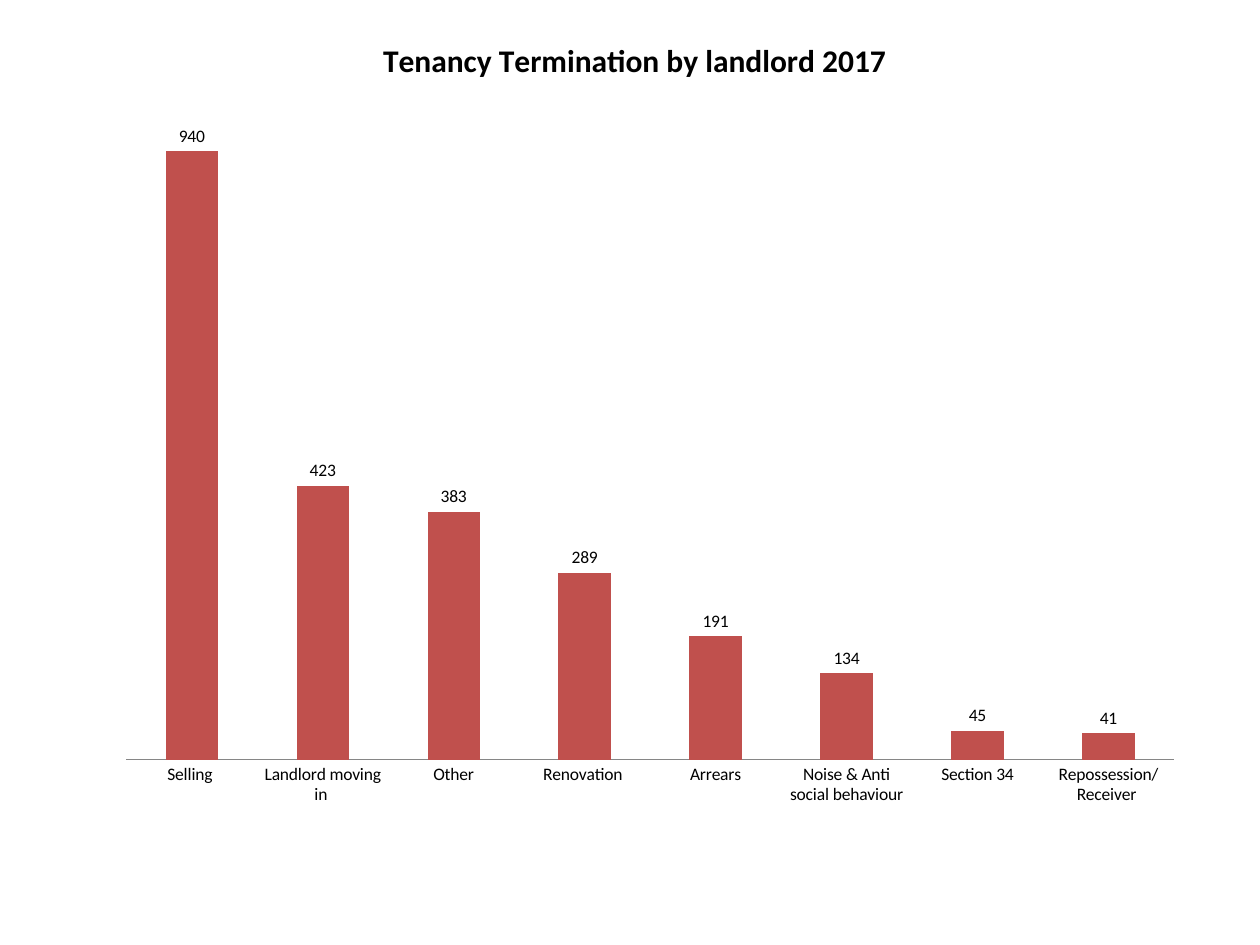
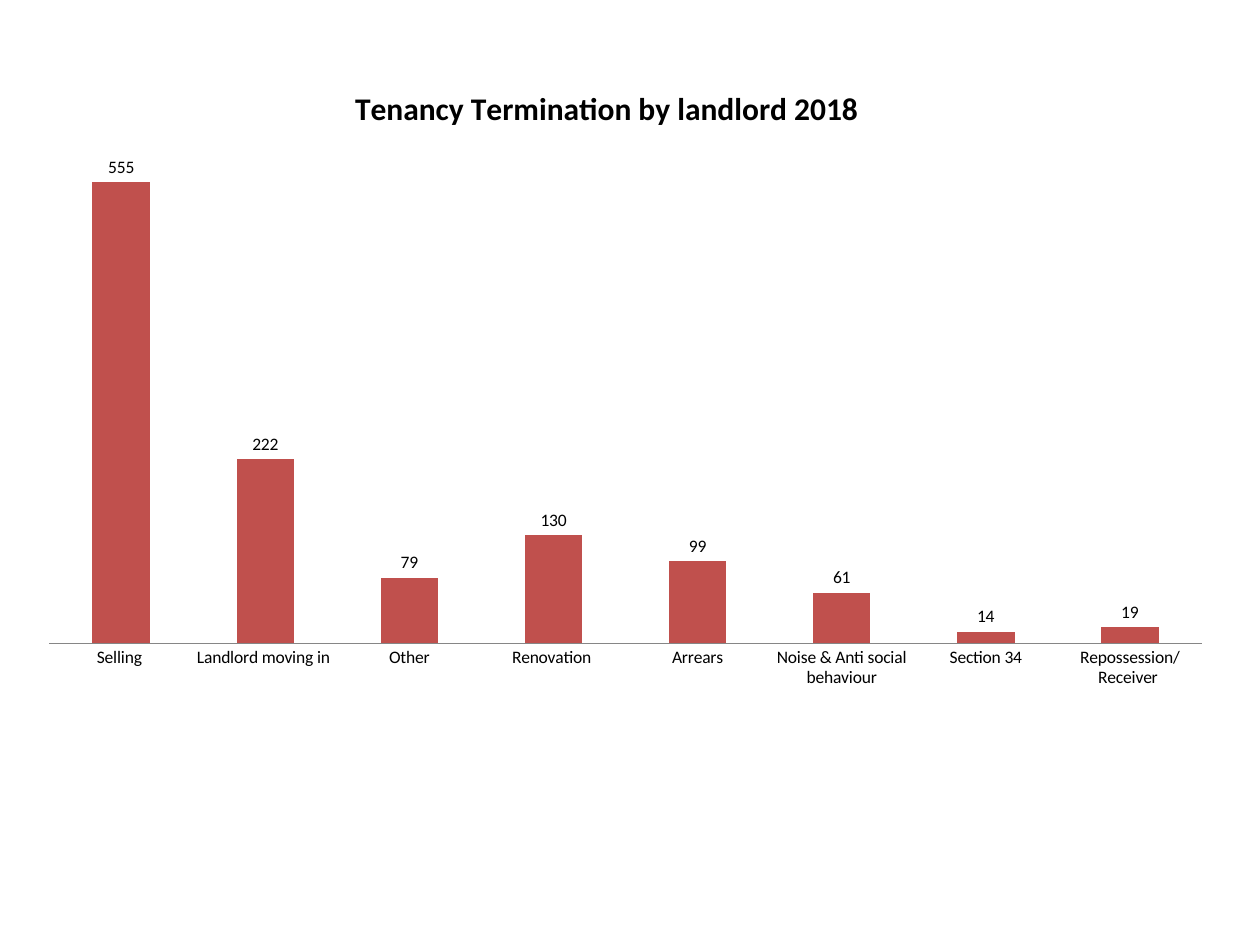
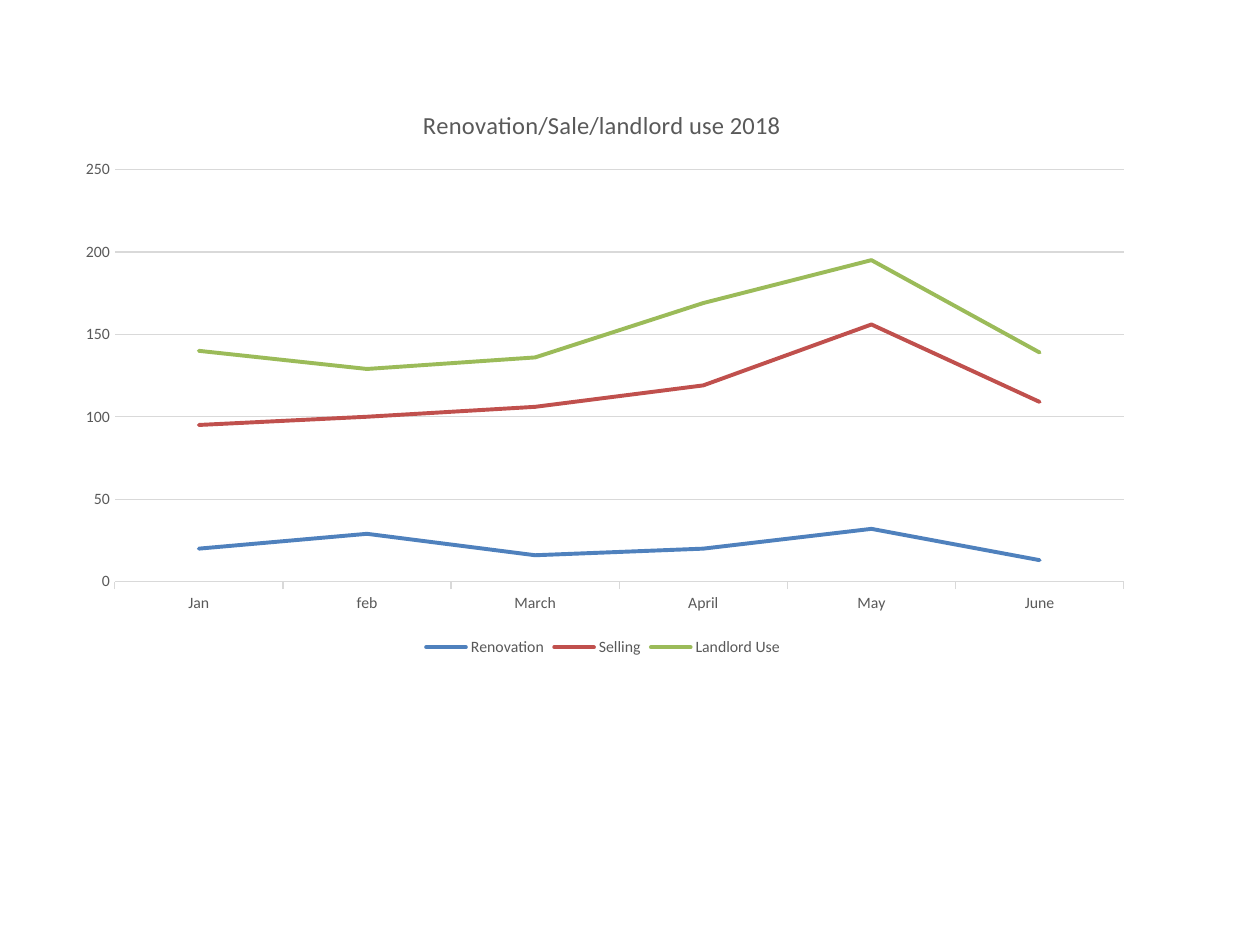
from lxml import etree
from pptx import Presentation
from pptx import util as u
from pptx.chart import data as cd
from pptx.dml.color import RGBColor
from pptx.enum import chart as ec
from pptx.oxml import ns

FONT = "Calibri"
COLORS = {
    "text": "000000",
    "muted": "595959",
    "grid": "D9D9D9",
    "axis": "868686",
    "blue": "4F81BD",
    "red": "C0504D",
    "green": "9BBB59",
}
REASONS = [
    "Selling ", "Landlord moving in ", "Other", "Renovation ", "Arrears",
    "Noise & Anti social behaviour", "Section 34", "Repossession/Receiver ",
]
MONTHS = ["Jan", "feb", "March", "April", "May", "June"]
USES = [
    ("Renovation", [20, 29, 16, 20, 32, 13], "blue"),
    ("Selling", [75, 71, 90, 99, 124, 96], "red"),
    ("Landlord Use ", [45, 29, 30, 50, 39, 30], "green"),
]


def rgb(name):
    return RGBColor.from_string(COLORS[name])


def style(font, size, color, bold=False):
    font.name, font.size, font.bold = FONT, u.Pt(size), bold
    font.color.rgb = rgb(color)


def draw(line, color, width=0.75):
    line.color.rgb = rgb(color)
    line.width = u.Pt(width)


def add_chart(deck, kind, box, cats, rows):
    """Put a chart on a new blank slide; rows are (name, values) pairs."""
    slide = deck.slides.add_slide(deck.slide_layouts[6])
    data = cd.CategoryChartData()
    data.categories = cats
    for name, vals in rows:
        data.add_series(name, vals)
    frame = slide.shapes.add_chart(kind, *map(u.Inches, box), data)
    style(frame.chart.font, 10, "text")
    return frame.chart


def add_title(chart, words, size, color, bold=False, spot=None):
    """Set the title; spot is its top left corner as fractions of the chart."""
    title = chart.chart_title
    title.text_frame.text = words
    style(title.text_frame.paragraphs[0].runs[0].font, size, color, bold)
    title.include_in_layout = False
    if spot:
        layout = title.element.find(ns.qn("c:layout"))
        manual = etree.SubElement(layout, ns.qn("c:manualLayout"))
        pairs = [("xMode", "edge"), ("yMode", "edge"), ("x", spot[0]), ("y", spot[1])]
        for tag, val in pairs:
            etree.SubElement(manual, ns.qn(f"c:{tag}")).set("val", str(val))


def add_bars(deck, year, vals, box, spot):
    chart = add_chart(deck, ec.XL_CHART_TYPE.COLUMN_CLUSTERED, box, REASONS,
                      [("Series 1", vals)])
    add_title(chart, f"Tenancy Termination by landlord {year}", 18, "text", True, spot)
    chart.has_legend = False
    chart.value_axis.visible = False
    chart.value_axis.has_major_gridlines = False
    axis = chart.category_axis
    axis.major_tick_mark = ec.XL_TICK_MARK.NONE
    draw(axis.format.line, "axis")

    plot = chart.plots[0]
    plot.gap_width, plot.overlap = 150, -25
    plot.vary_by_categories = False
    fill = plot.series[0].format.fill
    fill.solid()
    fill.fore_color.rgb = rgb("red")
    plot.has_data_labels = True
    labels = plot.data_labels
    labels.show_value = True
    labels.position = ec.XL_LABEL_POSITION.OUTSIDE_END
    style(labels.font, 10, "text")


def add_lines(deck, box):
    chart = add_chart(deck, ec.XL_CHART_TYPE.LINE_STACKED, box, MONTHS,
                      [row[:2] for row in USES])
    add_title(chart, "Renovation/Sale/landlord use 2018 ", 14, "muted")
    chart.has_legend = True
    legend = chart.legend
    legend.position = ec.XL_LEGEND_POSITION.BOTTOM
    legend.include_in_layout = False

    cats, vals = chart.category_axis, chart.value_axis
    for part in (legend.font, cats.tick_labels.font, vals.tick_labels.font):
        style(part, 9, "muted")
    cats.major_tick_mark = ec.XL_TICK_MARK.OUTSIDE
    draw(cats.format.line, "grid")
    vals.major_tick_mark = ec.XL_TICK_MARK.NONE
    vals.format.line.fill.background()
    vals.has_major_gridlines = True
    draw(vals.major_gridlines.format.line, "grid")

    chart.plots[0].vary_by_categories = False
    for series, (_, _, color) in zip(chart.series, USES):
        series.smooth = False
        series.marker.style = ec.XL_MARKER_STYLE.NONE
        draw(series.format.line, color, 2.25)
    for line in chart.element.xpath(".//c:ser/c:spPr/a:ln"):
        line.set("cap", "rnd")


def main():
    deck = Presentation()
    deck.slide_width, deck.slide_height = u.Inches(10), u.Inches(7.5)
    add_bars(deck, 2017, [940, 423, 383, 289, 191, 134, 45, 41],
             (0.83, 0.13, 8.66, 6.38), (0.25, 0.02))
    add_bars(deck, 2018, [555, 222, 79, 130, 99, 61, 14, 19],
             (0.2, 0.44, 9.53, 5.12), (0.27, 0.04))
    add_lines(deck, (0.51, 0.68, 8.58, 4.57))
    deck.save("out.pptx")


if __name__ == "__main__":
    main()
